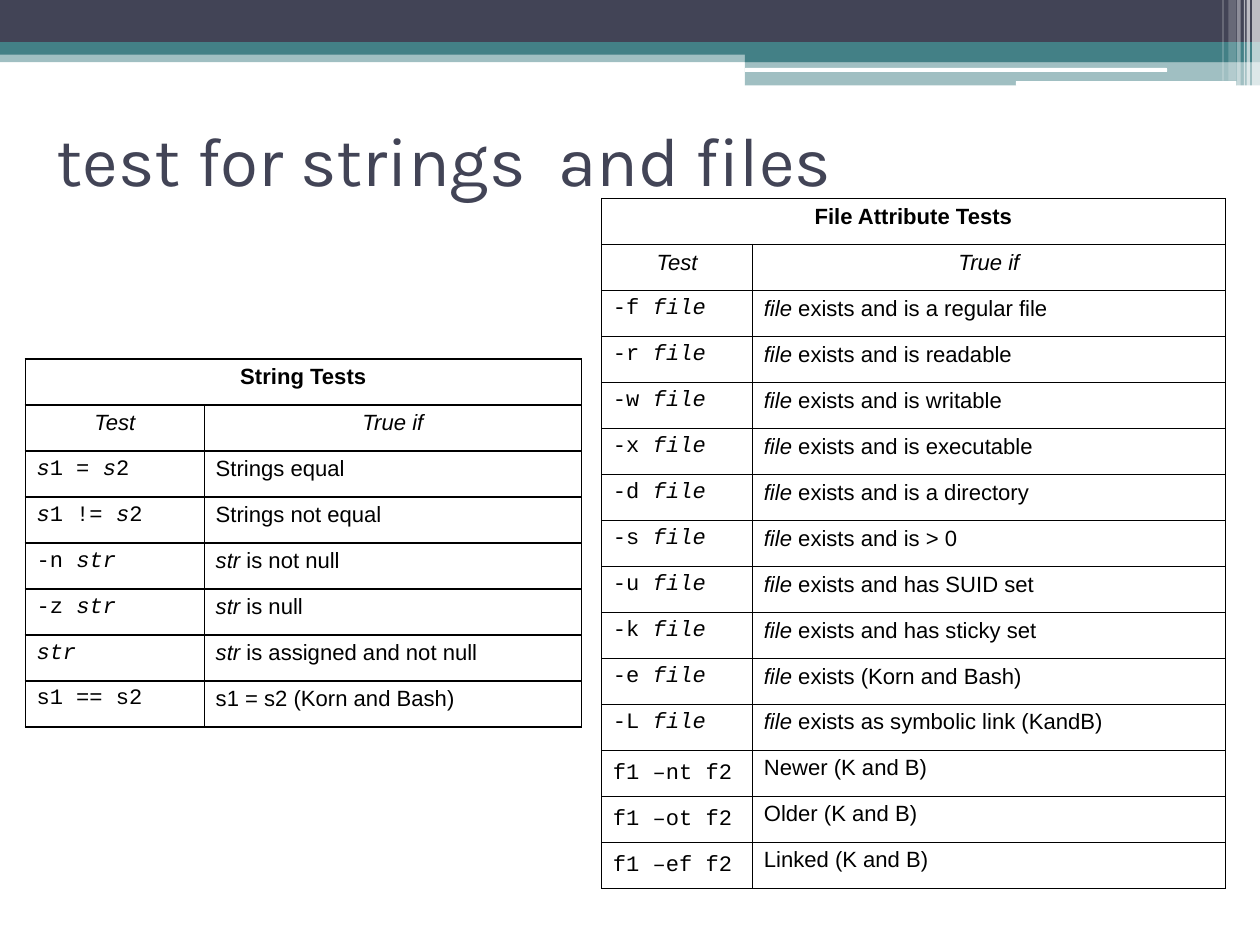
"""Build a slide listing the shell tests for strings and files."""
from dataclasses import dataclass

from lxml import etree
from pptx import Presentation
from pptx import util as u
from pptx.dml.color import RGBColor
from pptx.enum import shapes, text
from pptx.oxml import ns
from pptx.slide import Slide
from pptx.table import _Cell
from pptx.text.text import _Paragraph

COLORS = {"navy": "424456", "teal": "438086", "white": "FFFFFF", "black": "000000"}
SANS, MONO, HEADING = "Arial", "Courier New", "Karla"
ROW_HEIGHT = 29.2
CELL_SIZE = 14


@dataclass
class Bar:
    left: float
    top: float
    width: float
    height: float
    color: str
    opacity: int = 100
    rounded: bool = False


@dataclass
class TestTable:
    left: float
    top: float
    columns: tuple[float, float]
    row_line: float
    title: str
    rows: list[tuple[str, str]]
    middle_from: int


BARS = [
    Bar(0, 32.4, 800, 7, "teal", 50),
    Bar(0, 0, 800, 27, "navy"),
    Bar(0, 26.7, 800, 8, "teal"),
    Bar(473, 31.5, 327, 8, "teal"),
    Bar(473, 38.4, 327, 15.8, "teal", 50),
    Bar(473, 43.2, 268, 2.5, "white", rounded=True),
    Bar(645, 51.5, 140, 3, "white", rounded=True),
    Bar(795, 0, 5, 54.6, "white", 65),
    Bar(791.5, 0, 2.2, 54.6, "white", 65),
    Bar(789.8, 0, 0.8, 54.6, "white", 60),
    Bar(785.5, 0, 2.2, 54.6, "white", 40),
    Bar(780, 0, 5, 51.2, "white", 20),
    Bar(776.2, 0, 0.8, 51.2, "white", 30),
]

STRING_ROWS = [
    ("*s*1 = *s*2", "Strings equal"),
    ("*s*1 != *s*2", "Strings not equal"),
    ("-n *str*", "*str* is not null"),
    ("-z *str*", "*str* is null"),
    ("*str*", "*str* is assigned and not null"),
    ("s1 == s2", "s1 = s2 (Korn and Bash)"),
]
FILE_FLAGS = {
    "f": "and is a regular file",
    "r": "and is readable",
    "w": "and is writable",
    "x": "and is executable",
    "d": "and is a directory",
    "s": "and is > 0",
    "u": "and has SUID set",
    "k": "and has sticky set",
    "e": "(Korn and Bash)",
    "L": "as symbolic link (KandB)",
}
FILE_PAIRS = {"nt": "Newer", "ot": "Older", "ef": "Linked"}
FILE_ROWS = [(f"-{flag} *file*", f"*file* exists {meaning}") for flag, meaning in FILE_FLAGS.items()]
FILE_ROWS += [(f"f1 –{flag} f2", f"{meaning} (K and B)") for flag, meaning in FILE_PAIRS.items()]

TABLES = [
    TestTable(16, 228, (113.8, 239.4), 1.25, "String Tests", STRING_ROWS, len(STRING_ROWS)),
    TestTable(382, 126, (95.8, 300.2), 0.75, "File Attribute Tests", FILE_ROWS, len(FILE_FLAGS)),
]


def rgb(name: str) -> RGBColor:
    """Return a palette color."""
    return RGBColor.from_string(COLORS[name])


def draw_bar(slide: Slide, bar: Bar) -> None:
    """Draw one band of the header."""
    kind = shapes.MSO_SHAPE.ROUNDED_RECTANGLE if bar.rounded else shapes.MSO_SHAPE.RECTANGLE
    shape = slide.shapes.add_shape(kind, u.Pt(bar.left), u.Pt(bar.top), u.Pt(bar.width), u.Pt(bar.height))
    shape.shadow.inherit = False
    shape.line.fill.background()
    shape.fill.solid()
    shape.fill.fore_color.rgb = rgb(bar.color)
    if bar.opacity < 100:
        color = shape.fill._xPr.find(".//" + ns.qn("a:srgbClr"))
        etree.SubElement(color, ns.qn("a:alpha"), val=str(bar.opacity * 1000))


def draw_title(slide: Slide) -> None:
    """Write the slide title."""
    box = slide.shapes.add_textbox(u.Pt(28), u.Pt(54), u.Pt(720), u.Pt(93.6))
    frame = box.text_frame
    frame.word_wrap = True
    frame.vertical_anchor = text.MSO_ANCHOR.MIDDLE
    frame.margin_left = frame.margin_right = u.Pt(8)
    frame.margin_top = frame.margin_bottom = u.Pt(4)
    frame.text = "test for strings  and files"
    font = frame.paragraphs[0].runs[0].font
    font.name, font.size = HEADING, u.Pt(44)
    font.color.rgb = rgb("navy")


def write_marked(paragraph: _Paragraph, marked: str, font_name: str, bold: bool) -> None:
    """Write text whose starred parts are italic."""
    for index, part in enumerate(marked.split("*")):
        if part:
            run = paragraph.add_run()
            run.text = part
            run.font.name, run.font.size = font_name, u.Pt(CELL_SIZE)
            run.font.bold, run.font.italic = bold, index % 2 == 1
            run.font.color.rgb = rgb("black")


def style_cell(cell: _Cell, row_line: float) -> None:
    """Give a cell black borders and no fill."""
    properties = cell._tc.get_or_add_tcPr()
    for side, width in (("L", 0.75), ("R", 0.75), ("T", row_line), ("B", row_line)):
        line = etree.SubElement(properties, ns.qn(f"a:ln{side}"), w=str(u.Pt(width)))
        fill = etree.SubElement(line, ns.qn("a:solidFill"))
        etree.SubElement(fill, ns.qn("a:srgbClr"), val=COLORS["black"])
    cell.fill.background()


def draw_table(slide: Slide, test_table: TestTable) -> None:
    """Draw a table with a title row, a heading row and its tests."""
    rows = [(test_table.title, ""), ("*Test*", "*True if*"), *test_table.rows]
    frame = slide.shapes.add_table(
        len(rows), 2, u.Pt(test_table.left), u.Pt(test_table.top),
        u.Pt(sum(test_table.columns)), u.Pt(ROW_HEIGHT * len(rows)))
    table = frame.table
    table.first_row = table.horz_banding = False
    for column, width in zip(table.columns, test_table.columns):
        column.width = u.Pt(width)
    for row_index, row in enumerate(rows):
        table.rows[row_index].height = u.Pt(ROW_HEIGHT)
        for column_index, marked in enumerate(row):
            cell = table.cell(row_index, column_index)
            style_cell(cell, test_table.row_line)
            is_heading = row_index < 2
            is_code = column_index == 0 and not is_heading
            paragraph = cell.text_frame.paragraphs[0]
            write_marked(paragraph, marked, MONO if is_code else SANS, row_index == 0)
            if is_heading:
                paragraph.alignment = text.PP_ALIGN.CENTER
            if is_code and row_index - 2 >= test_table.middle_from:
                cell.vertical_anchor = text.MSO_ANCHOR.MIDDLE
    table.cell(0, 0).merge(table.cell(0, 1))


def main() -> None:
    """Build and save the presentation."""
    presentation = Presentation()
    presentation.slide_width, presentation.slide_height = u.Pt(800), u.Pt(600)
    slide = presentation.slides.add_slide(presentation.slide_layouts[6])
    for bar in BARS:
        draw_bar(slide, bar)
    draw_title(slide)
    for test_table in TABLES:
        draw_table(slide, test_table)
    presentation.save("out.pptx")


if __name__ == "__main__":
    main()
